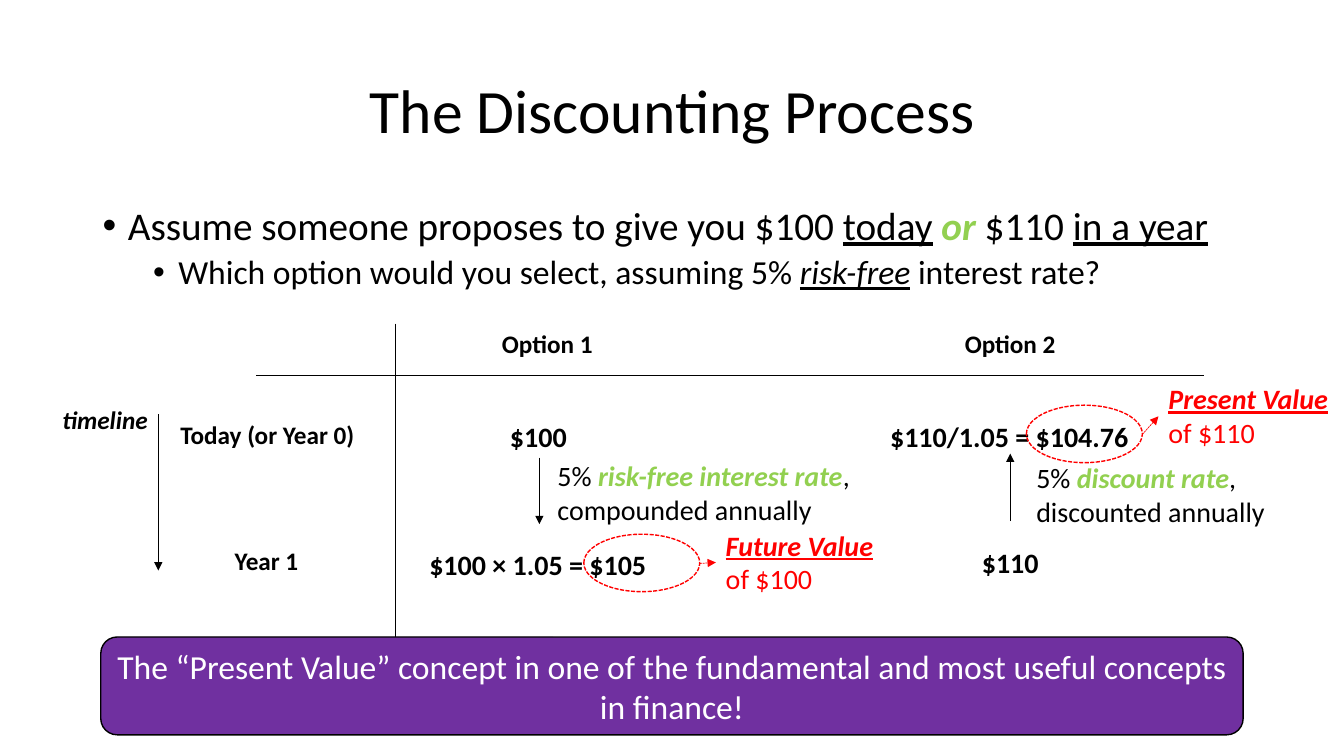
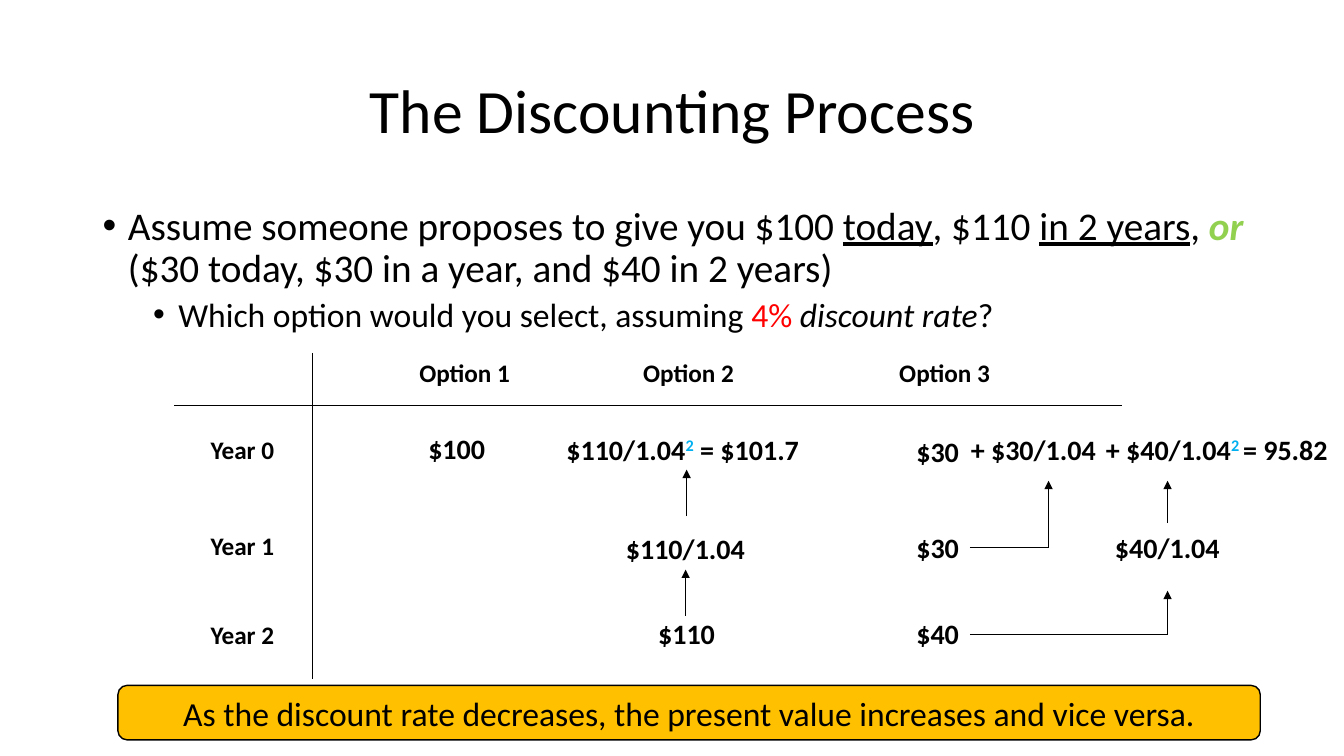
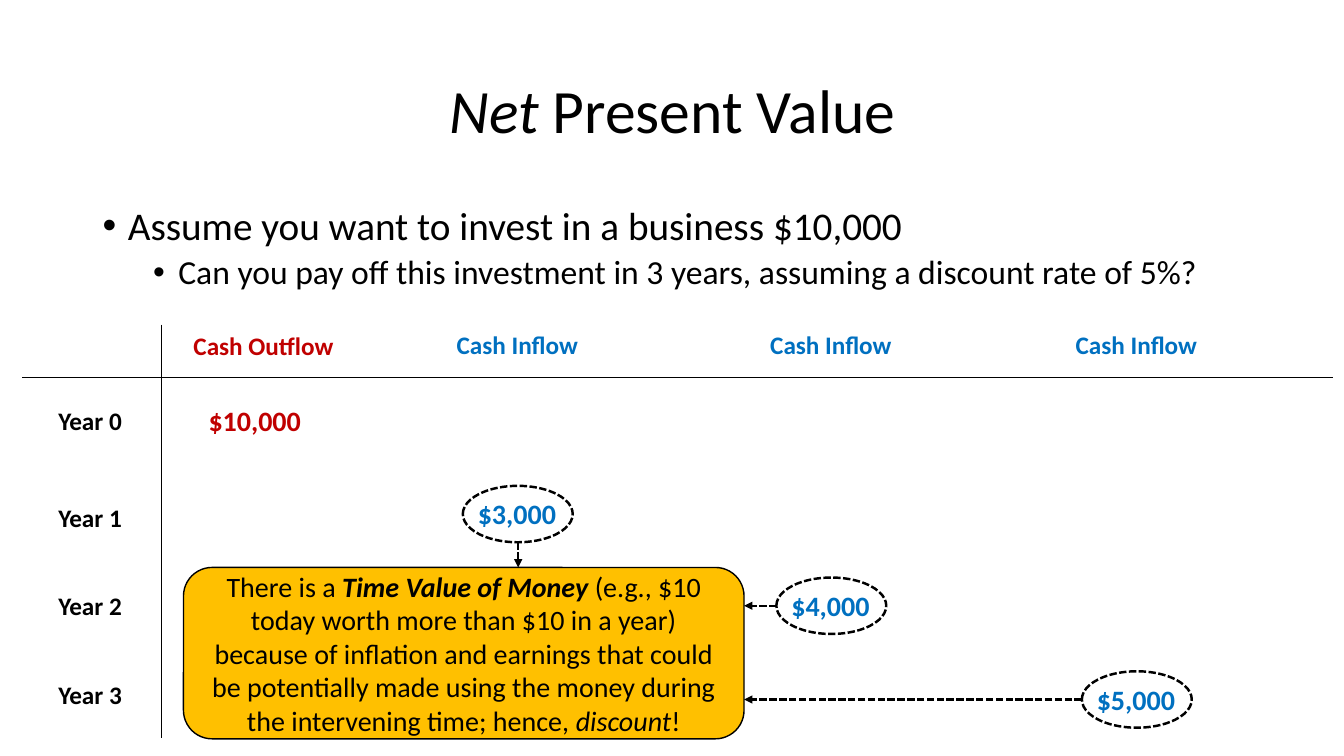
from pptx import Presentation
from pptx.dml.color import RGBColor
from pptx.enum.dml import MSO_LINE
from pptx.enum.shapes import MSO_CONNECTOR, MSO_SHAPE
from pptx.enum.text import MSO_ANCHOR, MSO_AUTO_SIZE, PP_ALIGN
from pptx.oxml.ns import qn
from pptx.util import Inches, Pt
from lxml import etree

STRAIGHT = MSO_CONNECTOR.STRAIGHT
ELLIPSE = MSO_SHAPE.OVAL
ROUNDED = MSO_SHAPE.ROUNDED_RECTANGLE
DASHED = MSO_LINE.SQUARE_DOT
CENTER = PP_ALIGN.CENTER
MIDDLE = MSO_ANCHOR.MIDDLE
FIT_SHAPE = MSO_AUTO_SIZE.SHAPE_TO_FIT_TEXT
LEFT_SIDE, RIGHT_SIDE = 1, 3

FONT = "Calibri"
BLACK, WHITE, RED, GREEN = "000000", "FFFFFF", "FF0000", "92D050"
PURPLE, AMBER = "7030A0", "FFC000"
OUTFLOW, INFLOW, EXPONENT = "C00000", "0070C0", "00B0F0"

UNDERLINE = {"underline": True}
ITALIC = {"italic": True}
STRONG = {"bold": True, "italic": True}
GREEN_TERM = {**STRONG, "color": GREEN}
RED_TERM = {**STRONG, **UNDERLINE, "color": RED}
POWER = {"color": EXPONENT, "baseline": "30000"}


def rgb(value):
    return RGBColor.from_string(value)


def add_spans(para, spans, **base):
    for item in [spans] if isinstance(spans, str) else spans:
        text, extra = (item, {}) if isinstance(item, str) else item
        look = {"name": FONT, "color": BLACK, **base, **extra}
        span = para.add_run()
        span.text = text
        span.font.color.rgb = rgb(look.pop("color"))
        span.font.size = Pt(look.pop("size"))
        baseline = look.pop("baseline", None)
        if baseline:
            span.font._element.set("baseline", baseline)
        for name, value in look.items():
            setattr(span.font, name, value)


def add_text(page, left, top, width, height):
    box = page.shapes.add_textbox(Inches(left), Inches(top), Inches(width), Inches(height))
    box.text_frame.word_wrap = True
    return box


def add_label(page, left, top, width, *lines, size=20, **look):
    line_height = 0.017 * size
    box = add_text(page, left, top, width, 0.1 + line_height * len(lines))
    frame = box.text_frame
    frame.word_wrap = False
    frame.auto_size = FIT_SHAPE
    for index, spans in enumerate(lines):
        para = frame.add_paragraph() if index else frame.paragraphs[0]
        add_spans(para, spans, size=size, **look)
    return box


def add_amount(page, left, top, width, spans, **look):
    return add_label(page, left, top, width, spans, bold=True, **look)


def add_heading(page, left, top, width, text, **look):
    return add_amount(page, left, top, width, text, size=18, **look)


def add_years(page, left, tops, first=0):
    for year, top in enumerate(tops, first):
        add_heading(page, left, top, 0.84, f"Year {year}")


def add_bullet(para, spans, level):
    para.level = level
    para.line_spacing = 0.9
    para.space_before = Pt(5 if level else 10)
    settings = para._p.get_or_add_pPr()
    settings.set("marL", str(Inches(0.25 + 0.5 * level)))
    settings.set("indent", str(Inches(-0.25)))
    font = etree.SubElement(settings, qn("a:buFont"))
    font.set("typeface", "Arial")
    etree.SubElement(settings, qn("a:buChar")).set("char", "•")
    add_spans(para, spans, size=24 if level else 28)


def add_page(deck, title, question, detail):
    page = deck.slides.add_slide(deck.slide_layouts[6])
    frame = add_text(page, 0.92, 0.4, 11.5, 1.45).text_frame
    frame.vertical_anchor = MIDDLE
    para = frame.paragraphs[0]
    para.alignment = CENTER
    para.line_spacing = 0.9
    add_spans(para, title, size=44)
    frame = add_text(page, 0.92, 2, 12.05, 5.01).text_frame
    add_bullet(frame.paragraphs[0], question, 0)
    add_bullet(frame.add_paragraph(), detail, 1)
    return page


def style_line(line, color, width, dashed):
    line.color.rgb = rgb(color)
    line.width = Pt(width)
    if dashed:
        line.dash_style = DASHED


def add_line(page, start, end, color=BLACK, width=0.5, dashed=False, arrow=False):
    line = page.shapes.add_connector(STRAIGHT, *map(Inches, start + end))
    style_line(line.line, color, width, dashed)
    if arrow:
        outline = line.line._get_or_add_ln()
        etree.SubElement(outline, qn("a:tailEnd")).set("type", "triangle")
    etree.SubElement(line._element.spPr, qn("a:effectLst"))
    return line


def add_arrow(page, start, end, **look):
    return add_line(page, start, end, arrow=True, **look)


def add_axes(page, x, top, bottom, y, left, right):
    add_line(page, (x, top), (x, bottom))
    add_line(page, (left, y), (right, y))


def add_ring(page, left, top, width, height, color, weight):
    ring = page.shapes.add_shape(ELLIPSE, *map(Inches, (left, top, width, height)))
    ring.shadow.inherit = False
    ring.fill.background()
    style_line(ring.line, color, weight, True)


def add_callout(page, left, top, width, height, fill, spans, size=24, color=BLACK):
    box = page.shapes.add_shape(ROUNDED, *map(Inches, (left, top, width, height)))
    box.shadow.inherit = False
    box.fill.solid()
    box.fill.fore_color.rgb = rgb(fill)
    style_line(box.line, BLACK, 1, False)
    box.text_frame.word_wrap = True
    box.text_frame.vertical_anchor = MIDDLE
    para = box.text_frame.paragraphs[0]
    para.alignment = CENTER
    add_spans(para, spans, size=size, color=color)


def add_ringed_value(page, ring_left, ring_top, left, top, width, term, rest):
    add_ring(page, ring_left, ring_top, 1.15, 0.57, RED, 1)
    box = add_label(page, left, top, width, [(term, RED_TERM)], rest, color=RED)
    start = (ring_left + 1.15, ring_top + 0.29)
    arrow = add_arrow(page, start, (left, top + 0.39), color=RED, dashed=True)
    arrow.end_connect(box, LEFT_SIDE)


def build_two_options(deck):
    page = add_page(
        deck, "The Discounting Process",
        ["Assume someone proposes to give you $100 ", ("today", UNDERLINE), " ",
         ("or", GREEN_TERM), " $110 ", ("in a year", UNDERLINE)],
        ["Which option would you select, assuming 5% ",
         ("risk-free", {**ITALIC, **UNDERLINE}), " interest rate?"])
    add_axes(page, 3.92, 3.21, 6.45, 3.72, 2.54, 11.94)
    for left, option in ((4.88, "Option 1"), (9.47, "Option 2")):
        add_heading(page, left, 3.21, 1.11, option)
    add_heading(page, 1.69, 4.11, 1.95, "Today (or Year 0)")
    add_years(page, 2.23, [5.36], first=1)
    add_heading(page, 0.52, 3.96, 1.06, "timeline", italic=True)
    add_arrow(page, (1.57, 4.11), (1.57, 5.66))

    add_amount(page, 4.96, 4.11, 0.77, "$100")
    add_arrow(page, (5.35, 4.54), (5.35, 5.2))
    add_label(page, 5.43, 4.5, 3.19,
              ["5% ", ("risk-free interest rate", GREEN_TERM), ","], "compounded annually")
    add_amount(page, 4.16, 5.38, 2.37, "$100 × 1.05 = $105")

    add_amount(page, 9.64, 5.36, 0.77, "$110")
    add_arrow(page, (10.02, 5.17), (10.02, 4.5))
    add_label(page, 10.18, 4.52, 2.53,
              ["5% ", ("discount rate", GREEN_TERM), ","], "discounted annually")
    add_amount(page, 8.73, 4.11, 2.59, "$110/1.05 = $104.76")

    add_callout(page, 1, 6.32, 11.33, 0.97, PURPLE,
                "The “Present Value” concept in one of the fundamental and most useful "
                "concepts in finance!", color=WHITE)
    add_ringed_value(page, 10.18, 4.02, 11.49, 3.74, 1.87, "Present Value", "of $110")
    add_ringed_value(page, 5.79, 5.3, 7.1, 5.19, 1.74, "Future Value", "of $100")


def build_three_options(deck):
    page = add_page(
        deck, "The Discounting Process",
        ["Assume someone proposes to give you $100 ", ("today", UNDERLINE), ", $110 ",
         ("in 2 years", UNDERLINE), ", ", ("or", GREEN_TERM),
         " ($30 today, $30 in a year, and $40 in 2 years)"],
        ["Which option would you select, assuming ", ("4% ", {"color": RED}),
         ("discount rate", ITALIC), "?"])
    add_axes(page, 3.1, 3.5, 6.74, 4.02, 1.73, 11.13)
    for option, left in enumerate((4.06, 6.28, 8.82), 1):
        add_heading(page, left, 3.5, 1.11, f"Option {option}")
    add_years(page, 1.99, (4.26, 5.21, 6.09))

    add_amount(page, 4.15, 4.23, 0.77, "$100")
    add_amount(page, 5.52, 4.24, 2.54, ["$110/1.04", ("2", POWER), " = $101.7"])
    add_amount(page, 6.11, 5.22, 1.39, "$110/1.04")
    add_amount(page, 6.43, 6.07, 0.77, "$110")

    add_amount(page, 8.99, 4.26, 0.63, "$30")
    add_amount(page, 9.53, 4.24, 1.45, "+ $30/1.04")
    add_amount(page, 10.87, 4.24, 2.44, ["+ $40/1.04", ("2 ", POWER), "= 95.82"])
    add_amount(page, 10.96, 5.21, 1.25, "$40/1.04")
    for top, amount, turn in ((5.21, "$30", 10.4), (6.07, "$40", 11.58)):
        payment = add_amount(page, 8.99, top, 0.63, amount)
        branch = add_line(page, (9.62, top + 0.22), (turn, top + 0.22))
        branch.begin_connect(payment, RIGHT_SIDE)

    for x, bottom, top in ((6.81, 5.12, 4.66), (6.8, 6.11, 5.65), (10.4, 5.43, 4.77),
                           (11.58, 5.19, 4.77), (11.58, 6.29, 5.86)):
        add_arrow(page, (x, bottom), (x, top))
    add_callout(page, 1.17, 6.8, 11.33, 0.54, AMBER,
                "As the discount rate decreases, the present value increases and vice versa.")


def build_net_value(deck):
    page = add_page(
        deck, [("Net", ITALIC), " Present Value"],
        "Assume you want to invest in a business $10,000",
        "Can you pay off this investment in 3 years, assuming a discount rate of 5%?")
    add_axes(page, 1.6, 3.22, 7.32, 3.74, 0.22, 13.22)
    add_years(page, 0.48, (3.97, 4.93, 5.81, 6.69))
    add_heading(page, 1.82, 3.23, 1.61, "Cash Outflow", color=OUTFLOW)
    add_amount(page, 1.97, 3.95, 1.13, "$10,000", color=OUTFLOW)
    add_callout(page, 1.82, 5.63, 5.56, 1.7, AMBER,
                ["There is a ", ("Time Value of Money ", STRONG),
                 "(e.g., $10 today worth more than $10 in a year) because of inflation and "
                 "earnings that could be potentially made using the money during the "
                 "intervening time; hence, ", ("discount", ITALIC), "!"], size=20)
    inflows = ((4.59, 4.82, "$3,000"), (7.7, 5.73, "$4,000"), (10.73, 6.66, "$5,000"))
    for left, top, amount in inflows:
        add_heading(page, left - 0.16, 3.22, 1.42, "Cash Inflow", color=INFLOW)
        add_amount(page, left + 0.05, top + 0.06, 0.98, amount, color=INFLOW)
        add_ring(page, left, top, 1.09, 0.56, BLACK, 1.75)
    for start, end in (((5.14, 5.38), (5.14, 5.63)), ((7.7, 6.01), (7.38, 6.01)),
                       ((10.73, 6.94), (7.38, 6.94))):
        add_arrow(page, start, end, width=1.75, dashed=True)


def main():
    deck = Presentation()
    deck.slide_width = Inches(13.33)
    deck.slide_height = Inches(7.5)
    build_two_options(deck)
    build_three_options(deck)
    build_net_value(deck)
    deck.save("out.pptx")


if __name__ == "__main__":
    main()
